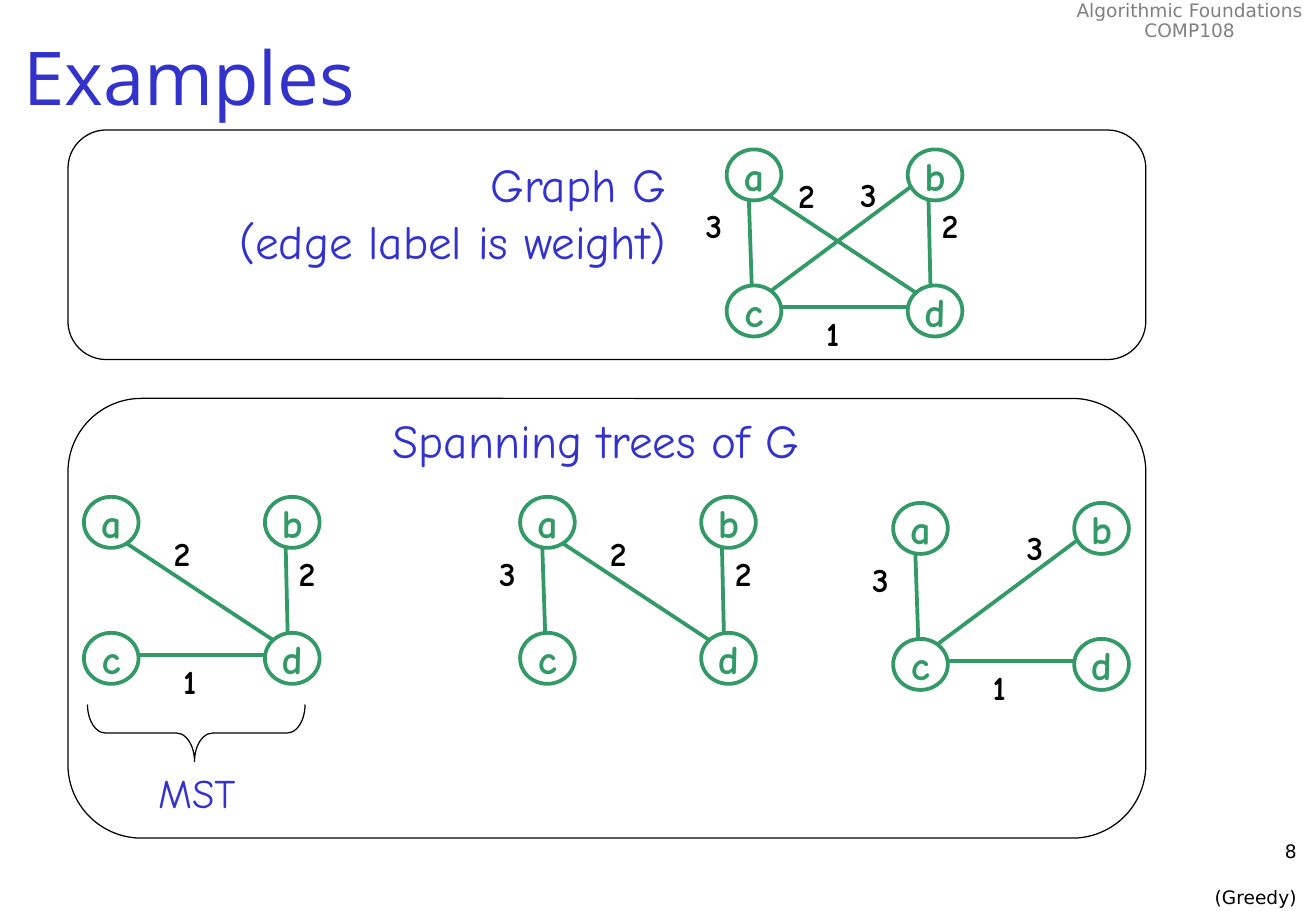
from dataclasses import dataclass

from lxml.etree import SubElement
from pptx import Presentation
from pptx.dml.color import RGBColor
from pptx.enum.shapes import MSO_CONNECTOR, MSO_SHAPE
from pptx.enum.text import MSO_ANCHOR, MSO_AUTO_SIZE, PP_ALIGN
from pptx.oxml.ns import qn
from pptx.util import Inches, Pt


@dataclass(frozen=True)
class Theme:
    blue: RGBColor = RGBColor(0x33, 0x33, 0xCC)
    green: RGBColor = RGBColor(0x33, 0x99, 0x66)
    grey: RGBColor = RGBColor(0x80, 0x80, 0x80)
    black: RGBColor = RGBColor(0, 0, 0)
    white: RGBColor = RGBColor(0xFF, 0xFF, 0xFF)
    title_font: str = "Open Sans"
    body_font: str = "Comic Neue"
    small_font: str = "DejaVu Sans"
    title: Pt = Pt(44)
    heading: Pt = Pt(28)
    node: Pt = Pt(24)
    weight: Pt = Pt(20)
    small: Pt = Pt(11)
    edge_line: Pt = Pt(2.25)
    panel_line: Pt = Pt(0.75)


theme = Theme()


def write(frame, text, font, size, color, align=PP_ALIGN.LEFT, bold=False):
    frame.text = text
    for paragraph in frame.paragraphs:
        paragraph.alignment = align
        for run in paragraph.runs:
            run.font.name = font
            run.font.size = size
            run.font.bold = bold
            run.font.color.rgb = color


def add_text(box, text, font, size, color, align=PP_ALIGN.LEFT, bold=False, wrap=True):
    frame = slide.shapes.add_textbox(*map(Inches, box)).text_frame
    write(frame, text, font, size, color, align, bold)
    frame.word_wrap = wrap
    frame.auto_size = MSO_AUTO_SIZE.SHAPE_TO_FIT_TEXT
    return frame


prs = Presentation()
prs.slide_width, prs.slide_height = Inches(10.83), Inches(7.5)
slide = prs.slides.add_slide(prs.slide_layouts[5])

title = slide.shapes.title
title.left, title.top, title.width, title.height = map(Inches, (0.09, 0, 10.74, 1.25))
write(title.text_frame, "Examples", theme.title_font, theme.title, theme.blue)
title.text_frame.vertical_anchor = MSO_ANCHOR.MIDDLE

course = add_text((8.75, -0.04, 2.08, 0.43), "Algorithmic Foundations\nCOMP108",
                  theme.small_font, theme.small, theme.grey, PP_ALIGN.CENTER, wrap=False)
for paragraph in course.paragraphs:
    paragraph.line_spacing = 0.9

page = add_text((8.51, 6.87, 2.26, 0.5), "8\n(Greedy)",
                theme.small_font, theme.small, theme.black, PP_ALIGN.RIGHT)
page.auto_size = MSO_AUTO_SIZE.NONE
page.paragraphs[1].space_before = Pt(13.5)

for outline, box, rotation, adjustments in [
    (MSO_SHAPE.ROUNDED_RECTANGLE, (0.56, 1.07, 8.87, 1.89), 0, [0.167]),
    (MSO_SHAPE.ROUNDED_RECTANGLE, (0.56, 3.28, 8.87, 3.62), 0, [0.167]),
    (MSO_SHAPE.LEFT_BRACE, (1.38, 5.14, 0.47, 1.79), 270, [0.315, 0.492]),
]:
    frame_line = slide.shapes.add_shape(outline, *map(Inches, box))
    frame_line.rotation = rotation
    for index, value in enumerate(adjustments):
        frame_line.adjustments[index] = value
    frame_line.shadow.inherit = False
    frame_line.fill.background()
    frame_line.line.color.rgb = theme.black
    frame_line.line.width = theme.panel_line

for box, text, size, align in [
    ((0.72, 1.23, 4.86, 1.03), "Graph G\n(edge label is weight)", theme.heading, PP_ALIGN.RIGHT),
    ((2.26, 3.34, 5.29, 0.57), "Spanning trees of G", theme.heading, PP_ALIGN.CENTER),
    ((0.64, 6.27, 1.96, 0.5), "MST", theme.node, PP_ALIGN.CENTER),
]:
    add_text(box, text, theme.body_font, size, theme.blue, align)

nodes = {"a": (0, 0), "b": (1.49, 0), "c": (0, 1.12), "d": (1.49, 1.12)}
edges = {
    "ac": ((0.18, 0.33), (0.21, 1.22), "3", (-0.27, 0.41)),
    "ad": ((0.27, 0.33), (1.74, 1.3), "2", (0.64, 0.25)),
    "bc": ((1.66, 0.2), (0.29, 1.22), "3", (1, 0.15)),
    "bd": ((1.66, 0.35), (1.68, 1.24), "2", (1.67, 0.41)),
    "cd": ((0.21, 1.3), (1.66, 1.3), "1", (0.72, 1.3)),
}
graphs = [
    (5.98, 1.23, ["ac", "ad", "bc", "bd", "cd"], {"ad": (0.49, 0.16)}),
    (0.69, 4.09, ["ad", "bd", "cd"], {}),
    (4.28, 4.09, ["ac", "ad", "bd"], {}),
    (7.35, 4.14, ["ac", "bc", "cd"], {}),
]

for left, top, edge_names, moved_weights in graphs:
    for edge_name in edge_names:
        (x1, y1), (x2, y2), weight, weight_place = edges[edge_name]
        edge = slide.shapes.add_connector(
            MSO_CONNECTOR.STRAIGHT, Inches(left + x1), Inches(top + y1),
            Inches(left + x2), Inches(top + y2))
        edge.line.color.rgb = theme.green
        edge.line.width = theme.edge_line
        SubElement(edge._element.spPr, qn("a:effectLst"))
        dx, dy = moved_weights.get(edge_name, weight_place)
        add_text((left + dx, top + dy, 0.37, 0.43), weight, theme.body_font,
                 theme.weight, theme.black, bold=True, wrap=False)
    for letter, (dx, dy) in nodes.items():
        node = slide.shapes.add_shape(MSO_SHAPE.OVAL, Inches(left + dx), Inches(top + dy),
                                      Inches(0.45), Inches(0.42))
        node.shadow.inherit = False
        node.fill.solid()
        node.fill.fore_color.rgb = theme.white
        node.line.color.rgb = theme.green
        node.line.width = theme.edge_line
        write(node.text_frame, letter, theme.body_font, theme.node, theme.green,
              PP_ALIGN.CENTER, bold=True)
        node.text_frame.word_wrap = False
        node.text_frame.vertical_anchor = MSO_ANCHOR.MIDDLE

prs.save("out.pptx")
